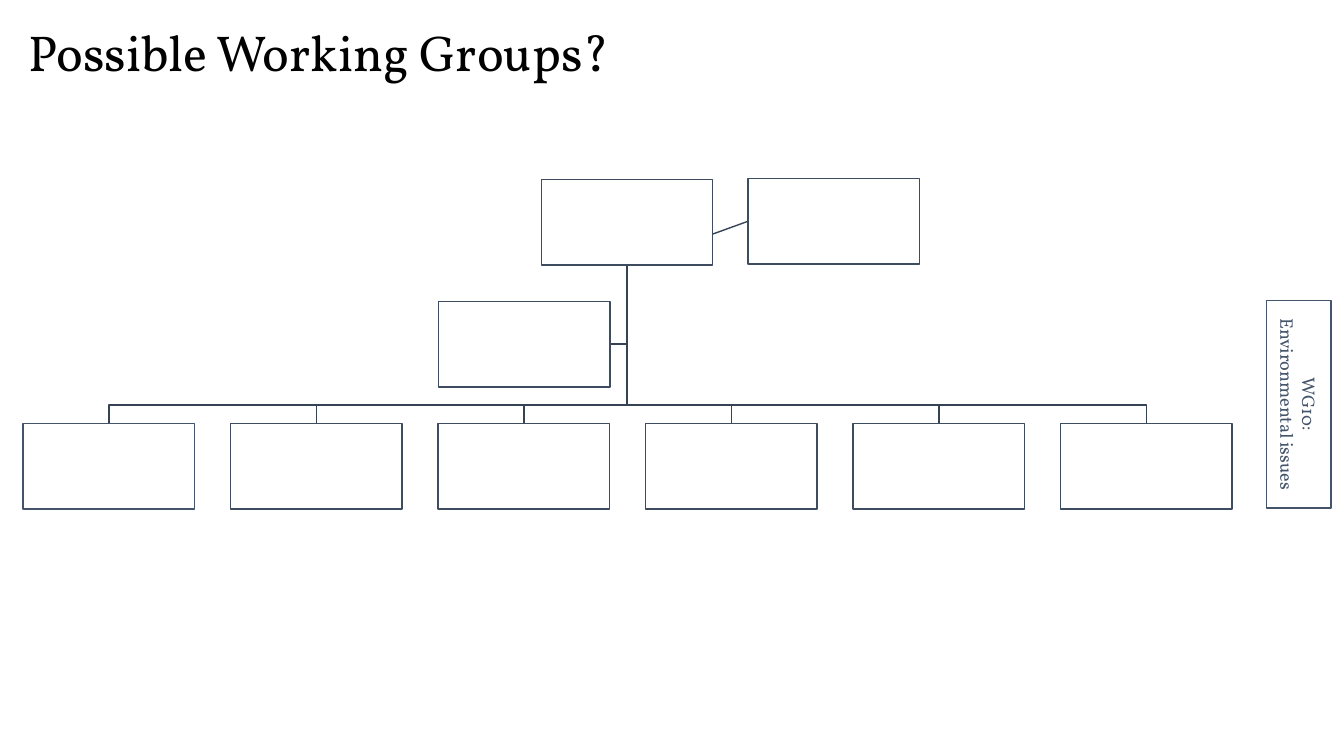
"""Build the working groups organisation chart slide."""
from pptx import Presentation, util as u
from pptx.dml.color import RGBColor
from pptx.enum import shapes, text
from pptx.oxml.ns import qn
from lxml import etree

FONT = "Vollkorn"
TITLE = "Possible Working Groups?"
SIDE_LINES = ["WG10:", "Environmental issues"]
SIDE_AREA = (12.56, 2.98, 0.64, 2.06)
TITLE_AREA = (0.18, 0.16, 6.12, 0.71)
BOX_WIDTH, BOX_HEIGHT = 1.7, 0.85
LEAD, ADVISER, ASSISTANT = (5.37, 1.78), (7.42, 1.77), (4.35, 2.99)
GROUP_COUNT, GROUP_LEFT, GROUP_TOP, GROUP_STEP = 6, 0.23, 4.2, 2.058
BUS_TOP = 4.02
INK, EDGE, LINK, WHITE, BLACK = "44546A", "3E4C60", "364355", "FFFFFF", "000000"


def colour(code):
    return RGBColor.from_string(code)


def inches(values):
    return [u.Inches(value) for value in values]


def outline(item, code):
    item.line.color.rgb = colour(code)
    item.line.width = u.Pt(1)


def add_box(page, area, edge, fill=None):
    box = page.shapes.add_shape(shapes.MSO_SHAPE.RECTANGLE, *inches(area))
    box.shadow.inherit = False
    if fill:
        box.fill.solid()
        box.fill.fore_color.rgb = colour(fill)
    else:
        box.fill.background()
    outline(box, edge)
    return box


def add_route(page, points):
    start, *rest = [inches(point) for point in points]
    builder = page.shapes.build_freeform(*start, scale=1.0)
    builder.add_line_segments(rest, close=False)
    route = builder.convert_to_shape()
    route.shadow.inherit = False
    route.fill.background()
    outline(route, LINK)


def write(frame, lines, size, code, align):
    for index, line in enumerate(lines):
        para = frame.paragraphs[0] if index == 0 else frame.add_paragraph()
        para.alignment = align
        span = para.add_run()
        span.text = line
        span.font.name = FONT
        span.font.size = u.Pt(size)
        span.font.color.rgb = colour(code)


def main():
    deck = Presentation()
    deck.slide_width, deck.slide_height = inches((13.33, 7.5))
    page = deck.slides.add_slide(deck.slide_layouts[6])

    size = (BOX_WIDTH, BOX_HEIGHT)
    groups = [(GROUP_LEFT + i * GROUP_STEP, GROUP_TOP) for i in range(GROUP_COUNT)]
    trunk = LEAD[0] + BOX_WIDTH / 2
    lead_bottom = LEAD[1] + BOX_HEIGHT
    assistant_middle = ASSISTANT[1] + BOX_HEIGHT / 2

    link = page.shapes.add_connector(shapes.MSO_CONNECTOR.STRAIGHT, 0, 0, 0, 0)
    outline(link, LINK)
    etree.SubElement(link._element.spPr, qn("a:effectLst"))

    add_route(page, [(trunk, lead_bottom), (trunk, assistant_middle),
                     (ASSISTANT[0] + BOX_WIDTH, assistant_middle)])
    for left, top in reversed(groups):
        middle = left + BOX_WIDTH / 2
        add_route(page, [(trunk, lead_bottom), (trunk, BUS_TOP),
                         (middle, BUS_TOP), (middle, top)])

    lead = add_box(page, LEAD + size, EDGE, WHITE)
    for index, group in enumerate(groups):
        add_box(page, group + size, EDGE if index else INK, WHITE)
    add_box(page, ASSISTANT + size, EDGE, WHITE)
    adviser = add_box(page, ADVISER + size, EDGE, WHITE)
    link.begin_connect(lead, 2)
    link.end_connect(adviser, 1)

    side = add_box(page, SIDE_AREA, INK)
    side.text_frame.word_wrap = True
    side.text_frame.vertical_anchor = text.MSO_ANCHOR.MIDDLE
    side.text_frame._txBody.bodyPr.set("vert", "vert")
    write(side.text_frame, SIDE_LINES, 13, INK, text.PP_ALIGN.CENTER)

    title = page.shapes.add_textbox(*inches(TITLE_AREA))
    title.text_frame.word_wrap = False
    write(title.text_frame, [TITLE], 36, BLACK, text.PP_ALIGN.LEFT)

    deck.save("out.pptx")


if __name__ == "__main__":
    main()
